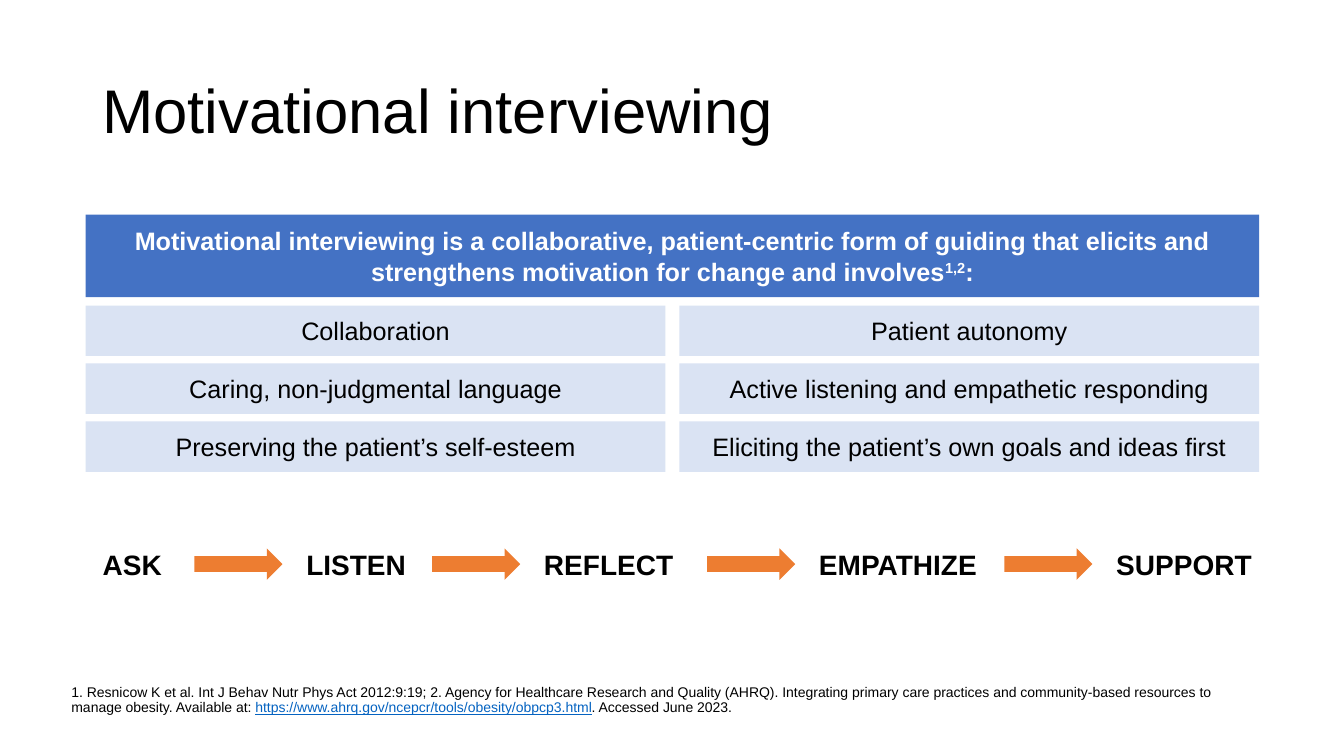
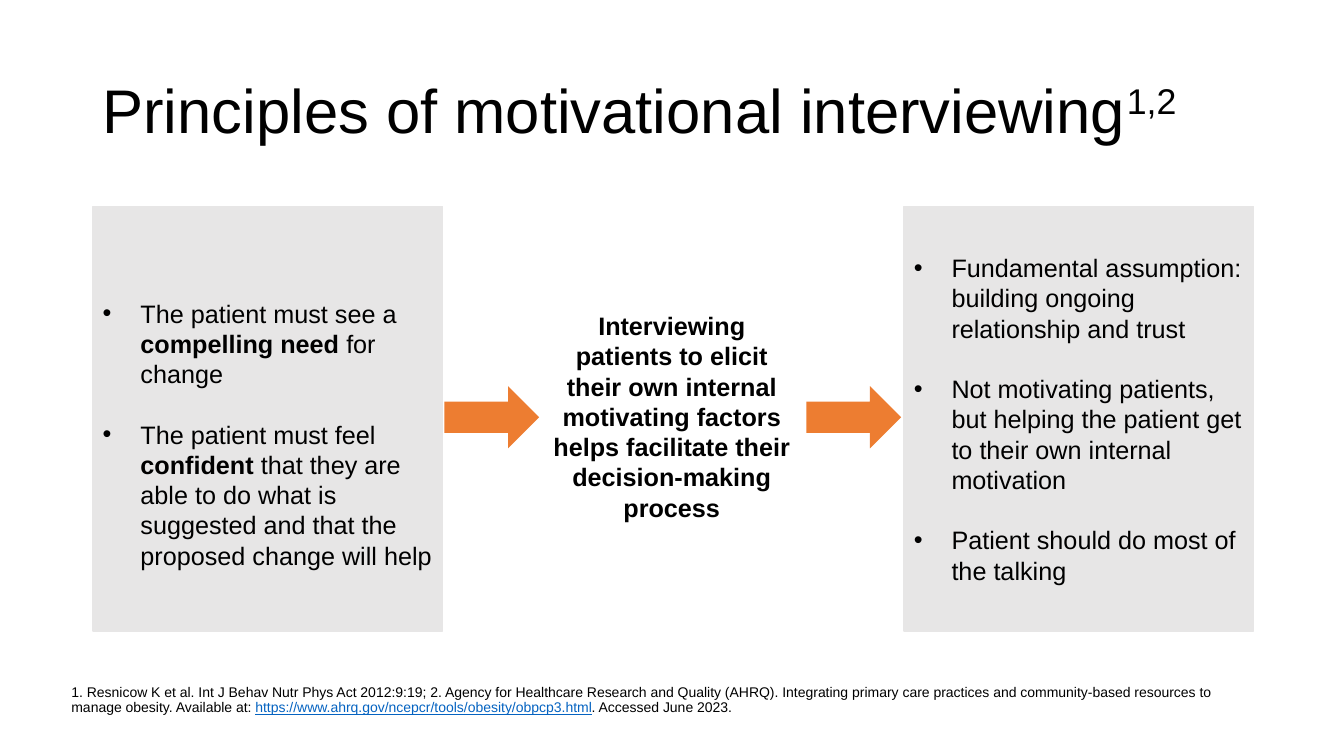
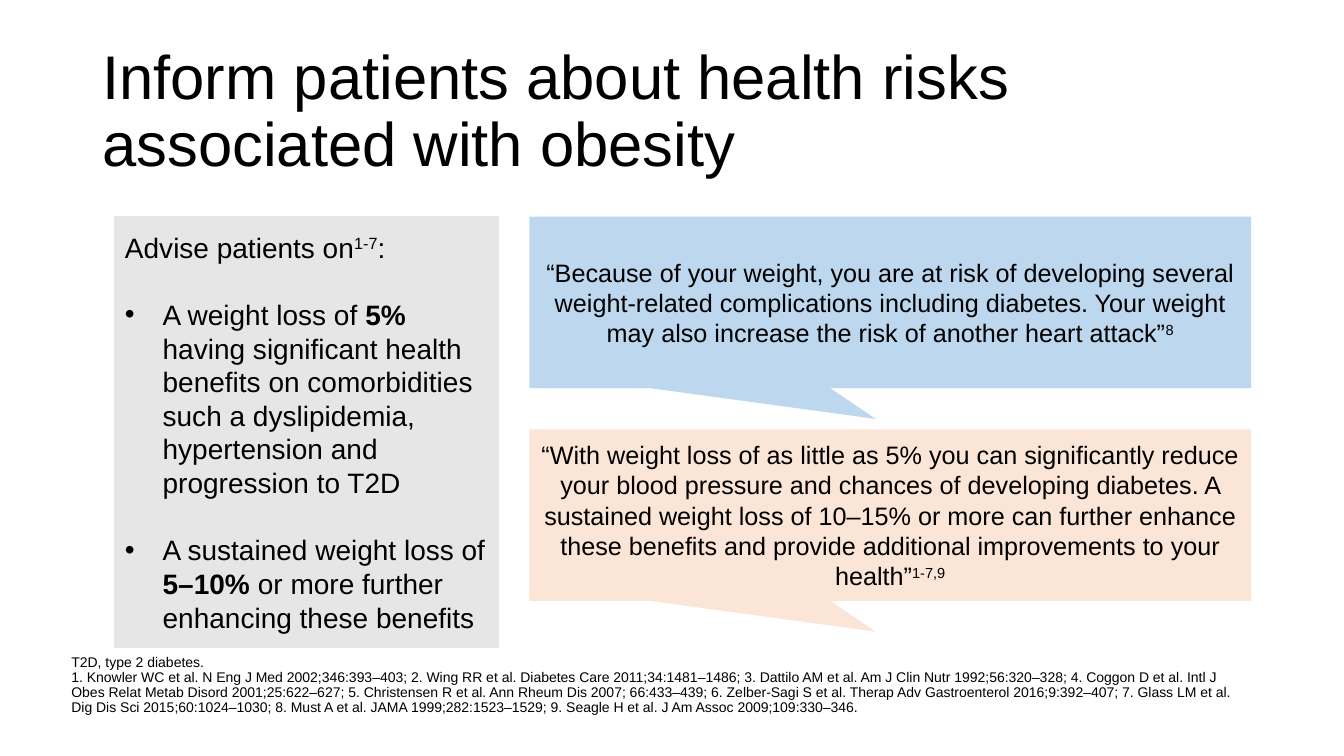
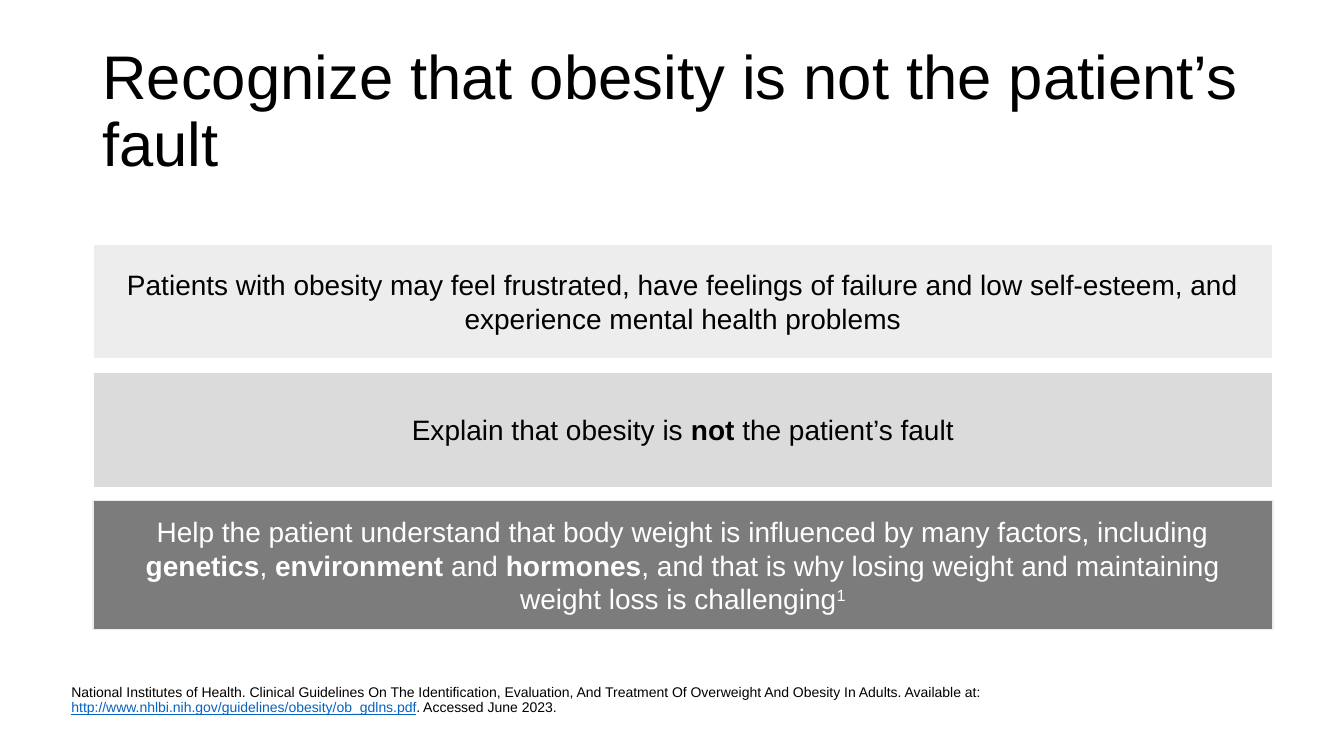
from lxml import etree
from pptx import Presentation
from pptx.dml.color import RGBColor
from pptx.enum.shapes import MSO_SHAPE
from pptx.enum.text import MSO_ANCHOR, PP_ALIGN
from pptx.oxml.ns import qn
from pptx.util import Cm, Pt

RECT = MSO_SHAPE.RECTANGLE
ARROW = MSO_SHAPE.RIGHT_ARROW
CALLOUT = MSO_SHAPE.RECTANGULAR_CALLOUT
LEFT, CENTER = PP_ALIGN.LEFT, PP_ALIGN.CENTER
TOP, MIDDLE, BOTTOM = MSO_ANCHOR.TOP, MSO_ANCHOR.MIDDLE, MSO_ANCHOR.BOTTOM

BLACK = RGBColor(0x00, 0x00, 0x00)
WHITE = RGBColor(0xFF, 0xFF, 0xFF)
BLUE = RGBColor(0x44, 0x72, 0xC4)
PALE_BLUE = RGBColor(0xDA, 0xE3, 0xF3)
SKY = RGBColor(0xBD, 0xD7, 0xEE)
PEACH = RGBColor(0xFB, 0xE5, 0xD6)
ORANGE = RGBColor(0xED, 0x7D, 0x31)
PANEL_GREY = RGBColor(0xE7, 0xE6, 0xE6)
LIGHT_GREY = RGBColor(0xED, 0xED, 0xED)
MID_GREY = RGBColor(0xDB, 0xDB, 0xDB)
DARK_GREY = RGBColor(0x7C, 0x7C, 0x7C)
LINK_BLUE = RGBColor(0x05, 0x63, 0xC1)

# Run formats
BOLD = {"bold": True}
SUP = {"baseline": "30000"}
LINK = {"underline": True, "color": LINK_BLUE}

MI_SOURCES = [[
    "1. Resnicow K et al. Int J Behav Nutr Phys Act 2012:9:19; "
    "2. Agency for Healthcare Research and Quality (AHRQ). Integrating primary care "
    "practices and community-based resources to manage obesity. Available at: ",
    ("https://www.ahrq.gov/ncepcr/tools/obesity/obpcp3.html", LINK),
    ". Accessed June 2023."]]


class Deck:
    """Holds the shared style and the current slide."""

    font = "Arial"
    line_height = 1.2
    indent = Cm(0.95)

    def __init__(self):
        self.prs = Presentation()
        self.prs.slide_width, self.prs.slide_height = Cm(33.87), Cm(19.05)
        self.s = None

    def slide(self, title, sources):
        """Start a slide with its title and its sources at the foot."""
        self.s = self.prs.slides.add_slide(self.prs.slide_layouts[6])
        self.box((2.33, 1.01, 29.21, 3.68), [title], 44, anchor=MIDDLE, spacing=0.9)
        self.box((1.8, 17.25, 29.74, 0.79), sources, 10, anchor=BOTTOM,
                 spacing=0.9, inset=0)

    def box(self, at, paras, size, **style):
        sp = self.s.shapes.add_textbox(*map(Cm, at))
        self.fill_text(sp, paras, size, **style)

    def shape(self, kind, at, fill, line=None):
        sp = self.s.shapes.add_shape(kind, *map(Cm, at))
        sp.shadow.inherit = False
        sp.fill.solid()
        sp.fill.fore_color.rgb = fill
        if line is None:
            sp.line.fill.background()
        else:
            sp.line.color.rgb = line
            sp.line.width = Pt(1)
        return sp

    def panel(self, at, fill, paras, size=18, line=None, kind=RECT, **style):
        """A filled shape with text, centred unless the style says otherwise."""
        sp = self.shape(kind, at, fill, line)
        self.fill_text(sp, paras, size, **{"align": CENTER, "anchor": MIDDLE, **style})
        return sp

    def bullets(self, at, paras, size=18, **style):
        """A grey panel with a list, one blank line high between the items."""
        self.panel(at, PANEL_GREY, paras, size, PANEL_GREY, align=LEFT,
                   gap=size * self.line_height, **{"first_bullet": 0, **style})

    def arrow(self, x, y, w, h):
        self.shape(ARROW, (x, y, w, h), ORANGE)

    def fill_text(self, sp, paras, size, color=BLACK, bold=False, align=LEFT, anchor=TOP,
                  spacing=1.0, gap=0, inset=None, top=None, first_bullet=None):
        tf = sp.text_frame
        frame = {"word_wrap": True, "vertical_anchor": anchor}
        if inset is not None:
            frame.update({f"margin_{side}": Cm(inset)
                          for side in ("left", "top", "right", "bottom")})
        if top is not None:
            frame["margin_top"] = Cm(top)
        for name, value in frame.items():
            setattr(tf, name, value)
        for i, runs in enumerate(paras):
            p = tf.paragraphs[0] if i == 0 else tf.add_paragraph()
            p.alignment, p.line_spacing = align, spacing
            if i and gap:
                p.space_before = Pt(gap)
            if first_bullet is not None and i >= first_bullet:
                self.add_bullet(p)
            for run in runs:
                text, fmt = (run, {}) if isinstance(run, str) else run
                self.add_run(p, text, {"size": Pt(size), "bold": bold,
                                       "color": color, **fmt})

    def add_bullet(self, p):
        pPr = p._p.get_or_add_pPr()
        pPr.set("marL", str(self.indent))
        pPr.set("indent", str(-self.indent))
        etree.SubElement(pPr, qn("a:buFont")).set("typeface", self.font)
        etree.SubElement(pPr, qn("a:buChar")).set("char", "•")

    def add_run(self, p, text, fmt):
        r = p.add_run()
        r.text = text
        r.font.name = self.font
        for name, value in fmt.items():
            if name == "color":
                r.font.color.rgb = value
            elif name == "baseline":
                r._r.get_or_add_rPr().set(name, value)
            else:
                setattr(r.font, name, value)


def interviewing(deck):
    deck.slide(["Motivational interviewing"], MI_SOURCES)

    # Definition and its six parts
    deck.panel((2.16, 5.41, 29.57, 2.08), BLUE, [[
        "Motivational interviewing is a collaborative, patient-centric form of guiding "
        "that elicits and strengthens motivation for change and involves",
        ("1,2", SUP), ":"]], color=WHITE, bold=True)
    parts = [
        ("Collaboration", "Patient autonomy"),
        ("Caring, non-judgmental language", "Active listening and empathetic responding"),
        ("Preserving the patient’s self-esteem",
         "Eliciting the patient’s own goals and ideas first")]
    for row, pair in enumerate(parts):
        for col, part in enumerate(pair):
            deck.panel((2.16 + col * 14.96, 7.7 + row * 1.46, 14.61, 1.27),
                       PALE_BLUE, [[part]])

    # Chain of steps, an arrow before each but the first
    x, gap, arrow_w = 2.34, 0.35, 2.22
    steps = [("ASK", 2.21), ("LISTEN", 3.07), ("REFLECT", 4.01),
             ("EMPATHIZE", 4.57), ("SUPPORT", 4.01)]
    for i, (step, w) in enumerate(steps):
        if i:
            deck.arrow(x + gap, 13.82, arrow_w, 0.79)
            x += arrow_w + 2 * gap
        deck.box((x, 13.67, w, 1.12), [[step]], 20, bold=True)
        x += w


def principles(deck):
    deck.slide(["Principles of motivational interviewing", ("1,2", SUP)], MI_SOURCES)

    # Need, guidance, assumption
    deck.bullets((2.34, 5.21, 8.81, 10.69), [
        ["The patient must see a ", ("compelling need ", BOLD), "for change"],
        ["The patient must feel ", ("confident", BOLD),
         " that they are able to do what is suggested and that the proposed change "
         "will help"]], top=0.89)
    deck.box((13.59, 7.7, 6.68, 5.64), [[
        "Interviewing patients to elicit their own internal motivating factors helps "
        "facilitate their decision-making process"]], 18, bold=True, align=CENTER)
    deck.bullets((22.78, 5.21, 8.81, 10.69), [
        ["Fundamental assumption: building ongoing relationship and trust"],
        ["Not motivating patients, but helping the patient get to their own internal "
         "motivation"],
        ["Patient should do most of the talking"]])
    for x in (11.2, 20.32):
        deck.arrow(x, 9.73, 2.39, 1.57)


def health_risks(deck):
    deck.slide(["Inform patients about health risks associated with obesity"], [
        ["T2D, type 2 diabetes."],
        ["1. Knowler WC et al. N Eng J Med 2002;346:393–403; "
         "2. Wing RR et al. Diabetes Care 2011;34:1481–1486; "
         "3. Dattilo AM et al. Am J Clin Nutr 1992;56:320–328; "
         "4. Coggon D et al. Intl J Obes Relat Metab Disord 2001;25:622–627; "
         "5. Christensen R et al. Ann Rheum Dis 2007; 66:433–439; "
         "6. Zelber-Sagi S et al. Therap Adv Gastroenterol 2016;9:392–407; "
         "7. Glass LM et al. Dig Dis Sci 2015;60:1024–1030; "
         "8. Must A et al. JAMA 1999;282:1523–1529; "
         "9. Seagle H et al. J Am Assoc 2009;109:330–346."]])

    # Advice
    deck.bullets((2.9, 5.46, 9.65, 10.85), [
        ["Advise patients on", ("1-7", SUP), ":"],
        ["A weight loss of ", ("5%", BOLD),
         " having significant health benefits on comorbidities such a dyslipidemia, "
         "hypertension and progression to T2D"],
        ["A sustained weight loss of ", ("5–10% ", BOLD),
         "or more further enhancing these benefits"]], 20, first_bullet=1)

    # What to say
    quotes = [
        (SKY, "“Because of your weight, you are at risk of developing several "
              "weight-related complications including diabetes. Your weight may also "
              "increase the risk of another heart attack”", "8"),
        (PEACH, "“With weight loss of as little as 5% you can significantly reduce your "
                "blood pressure and chances of developing diabetes. A sustained weight "
                "loss of 10–15% or more can further enhance these benefits and provide "
                "additional improvements to your health”", "1-7,9")]
    for i, (fill, quote, refs) in enumerate(quotes):
        sp = deck.panel((13.34, 5.46 + i * 5.36, 18.19, 4.32), fill,
                        [[quote, (refs, SUP)]], kind=CALLOUT)
        sp.adjustments[0], sp.adjustments[1] = -0.02, 0.68


def not_at_fault(deck):
    deck.slide(["Recognize that obesity is not the patient’s fault"], [[
        "National Institutes of Health. Clinical Guidelines On The Identification, "
        "Evaluation, And Treatment Of Overweight And Obesity In Adults. Available at: ",
        ("http://www.nhlbi.nih.gov/guidelines/obesity/ob_gdlns.pdf", LINK),
        ". Accessed June 2023."]])

    # Three messages, darker downwards
    messages = [
        (2.9, LIGHT_GREY, WHITE, BLACK, [
            "Patients with obesity may feel frustrated, have feelings of failure and low "
            "self-esteem, and experience mental health problems"]),
        (2.9, MID_GREY, WHITE, BLACK, [
            "Explain that obesity is ", ("not", BOLD), " the patient’s fault"]),
        (3.25, DARK_GREY, LIGHT_GREY, WHITE, [
            "Help the patient understand that body weight is influenced by many factors, "
            "including ", ("genetics", BOLD), ", ", ("environment", BOLD), " and ",
            ("hormones", BOLD), ", and that is why losing weight and maintaining weight "
            "loss is challenging", ("1", SUP)])]
    for i, (h, fill, line, color, runs) in enumerate(messages):
        deck.panel((2.34, 6.15 + i * 3.23, 29.74, h), fill, [runs], 20, line, color=color)


def main():
    deck = Deck()
    for build in (interviewing, principles, health_risks, not_at_fault):
        build(deck)
    deck.prs.save("out.pptx")


if __name__ == "__main__":
    main()
